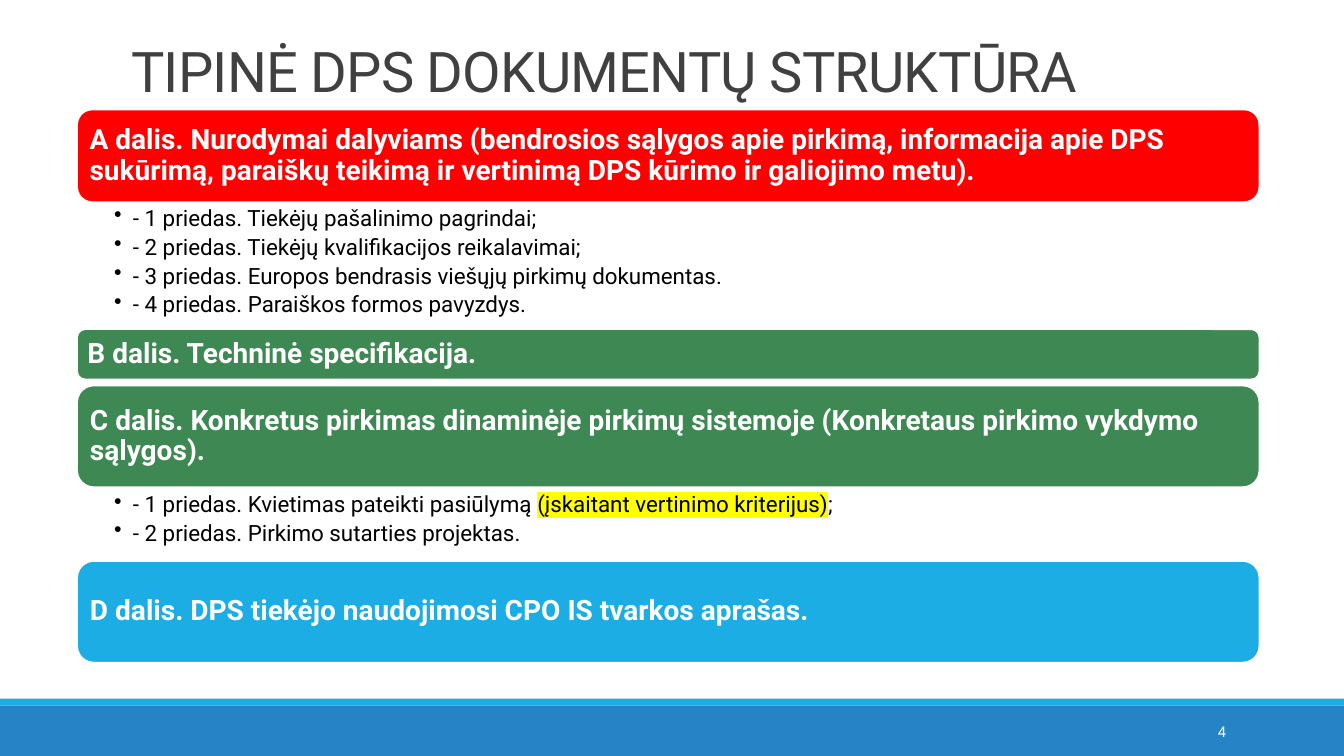
from lxml import etree
from pptx import Presentation
from pptx.dml.color import RGBColor
from pptx.enum.shapes import MSO_SHAPE
from pptx.enum.text import MSO_ANCHOR, MSO_AUTO_SIZE, PP_ALIGN
from pptx.oxml.ns import qn
from pptx.util import Pt

RECTANGLE, ROUNDED = MSO_SHAPE.RECTANGLE, MSO_SHAPE.ROUNDED_RECTANGLE
TOP, MIDDLE, BOTTOM = MSO_ANCHOR.TOP, MSO_ANCHOR.MIDDLE, MSO_ANCHOR.BOTTOM
LEFT, RIGHT = PP_ALIGN.LEFT, PP_ALIGN.RIGHT
FIXED = MSO_AUTO_SIZE.NONE

PAGE_WIDTH, PAGE_HEIGHT = 960, 540
BAND_LEFT, BAND_WIDTH = 54.7, 845.3
RED, GREEN, CYAN, BLUE = "FF0000", "3E8853", "1CADE4", "2683C6"
WHITE, BLACK, GREY, YELLOW = "FFFFFF", "000000", "404040", "FFFF00"

HEADINGS = [
    (77.8, 67, RED, "A dalis. Nurodymai dalyviams (bendrosios sąlygos apie pirkimą, informacija apie DPS "
                    "sukūrimą, paraiškų teikimą ir vertinimą DPS kūrimo ir galiojimo metu)."),
    (234.7, 36.7, GREEN, "B dalis. Techninė specifikacija."),
    (275, 73.4, GREEN, "C dalis. Konkretus pirkimas dinaminėje pirkimų sistemoje "
                       "(Konkretaus pirkimo vykdymo sąlygos)."),
    (400.3, 73.4, CYAN, "D dalis. DPS tiekėjo naudojimosi CPO IS tvarkos aprašas."),
]
ANNEXES = [
    (146.2, 93.6, [
        [("- 1 priedas. Tiekėjų pašalinimo pagrindai;", None)],
        [("- 2 priedas. Tiekėjų kvalifikacijos reikalavimai;", None)],
        [("- 3 priedas. Europos bendrasis viešųjų pirkimų dokumentas.", None)],
        [("- 4 priedas. Paraiškos formos pavyzdys.", None)],
    ]),
    (350.6, 65.5, [
        [("- 1 priedas. Kvietimas pateikti pasiūlymą ", None),
         ("(įskaitant vertinimo kriterijus)", YELLOW), (";", None)],
        [("- 2 priedas. Pirkimo sutarties projektas.", None)],
    ]),
]


def colour(value):
    """Turn a hex string into a colour."""
    return RGBColor.from_string(value)


def apply(target, values):
    """Set each attribute of the target from a dict."""
    for name, value in values.items():
        setattr(target, name, value)


class SlideBuilder:
    """Holds the text style and the current slide."""

    def __init__(self, page, font):
        """Keep the slide and its font name."""
        self.page = page
        self.font = font

    def place(self, shape, left, top, width, height):
        """Move and size a shape in points."""
        apply(shape, {"left": Pt(left), "top": Pt(top), "width": Pt(width), "height": Pt(height)})

    def frame(self, shape, anchor, insets):
        """Format the text frame of a shape."""
        sides = ("margin_left", "margin_top", "margin_right", "margin_bottom")
        values = {side: Pt(inset) for side, inset in zip(sides, insets)}
        apply(shape.text_frame, values | {"word_wrap": True, "auto_size": FIXED, "vertical_anchor": anchor})
        return shape.text_frame

    def span(self, para, text, size, ink, bold=False):
        """Add a formatted run."""
        span = para.add_run()
        span.text = text
        apply(span.font, {"name": self.font, "size": Pt(size), "bold": bold})
        span.font.color.rgb = colour(ink)
        return span

    def title(self, text, left, top, width, height):
        """Fill and format the title placeholder."""
        title = self.page.shapes.title
        self.place(title, left, top, width, height)
        para = self.frame(title, BOTTOM, (7.2, 3.6, 7.2, 3.6)).paragraphs[0]
        apply(para, {"alignment": LEFT, "line_spacing": 0.85})
        span = self.span(para, text, 40, GREY)
        span.font._element.set("spc", "-50")

    def block(self, kind, left, top, width, height, fill, border=None):
        """Add a filled shape."""
        shape = self.page.shapes.add_shape(kind, Pt(left), Pt(top), Pt(width), Pt(height))
        shape.shadow.inherit = False
        shape.fill.solid()
        shape.fill.fore_color.rgb = colour(fill)
        if border:
            shape.line.color.rgb = colour(border)
            shape.line.width = Pt(2)
        else:
            shape.line.fill.background()
        return shape

    def heading(self, top, height, fill, text):
        """Add a rounded band with a bold heading."""
        band = self.block(ROUNDED, BAND_LEFT, top, BAND_WIDTH, height, fill, WHITE)
        para = self.frame(band, MIDDLE, (6, 6, 6, 6)).paragraphs[0]
        apply(para, {"alignment": LEFT, "line_spacing": 0.9})
        self.span(para, text, 20, WHITE, True)

    def text_box(self, left, top, width, height, anchor, insets):
        """Add a text box and return its frame."""
        box = self.page.shapes.add_textbox(Pt(left), Pt(top), Pt(width), Pt(height))
        return self.frame(box, anchor, insets)

    def annexes(self, top, height, items):
        """Add a bulleted list of annexes."""
        frame = self.text_box(BAND_LEFT, top, BAND_WIDTH, height, TOP, (26.8, 1.6, 8.9, 1.6))
        for index, item in enumerate(items):
            para = frame.add_paragraph() if index else frame.paragraphs[0]
            apply(para, {"level": 1, "line_spacing": 0.9, "space_after": Pt(3.4)})
            properties = para._p.get_or_add_pPr()
            properties.set("marL", str(Pt(13.5)))
            properties.set("indent", str(-Pt(13.5)))
            etree.SubElement(properties, qn("a:buChar")).set("char", "•")
            for text, marker in item:
                span = self.span(para, text, 16, BLACK)
                if marker:
                    self.highlight(span, marker)

    def highlight(self, span, marker):
        """Put a marker colour behind a run."""
        mark = etree.Element(qn("a:highlight"))
        etree.SubElement(mark, qn("a:srgbClr")).set("val", marker)
        span.font._element.find(qn("a:solidFill")).addnext(mark)

    def page_number(self, text, left, top, width, height):
        """Add the page number in the footer."""
        para = self.text_box(left, top, width, height, MIDDLE, (7.2, 3.6, 7.2, 3.6)).paragraphs[0]
        para.alignment = RIGHT
        self.span(para, text, 10.5, WHITE)


def main():
    """Build and save the deck."""
    deck = Presentation()
    apply(deck, {"slide_width": Pt(PAGE_WIDTH), "slide_height": Pt(PAGE_HEIGHT)})
    builder = SlideBuilder(deck.slides.add_slide(deck.slide_layouts[5]), "Roboto")
    builder.block(RECTANGLE, 0, 504, PAGE_WIDTH, 36, BLUE)
    builder.block(RECTANGLE, 0, 499, PAGE_WIDTH, 5, CYAN)
    builder.title("TIPINĖ DPS DOKUMENTŲ STRUKTŪRA", 86.4, 22.3, 738, 55.5)
    builder.page_number("4", 779.8, 508.3, 103, 28.8)
    for heading in HEADINGS:
        builder.heading(*heading)
    for annex in ANNEXES:
        builder.annexes(*annex)
    deck.save("out.pptx")


if __name__ == "__main__":
    main()
